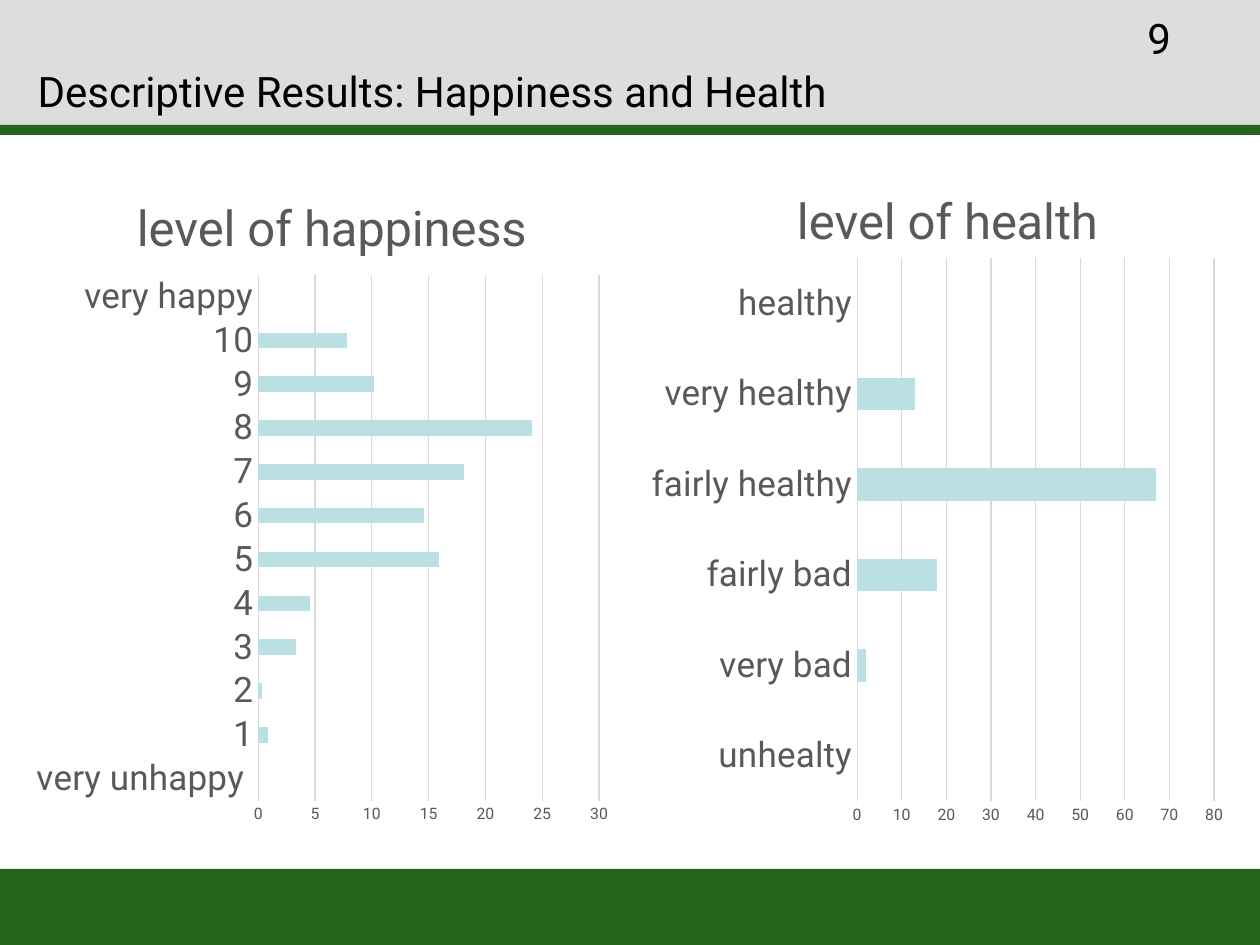
from lxml import etree
from pptx import Presentation
from pptx import util as u
from pptx.chart.data import CategoryChartData
from pptx.dml.color import RGBColor
from pptx.enum import chart as ch, shapes, text
from pptx.oxml.ns import qn

PX = u.Inches(1) / 126
GREEN, BAND, BLACK = "23651C", "DDDDDD", "000000"
GREY, GRID, BAR = "595959", "D9D9D9", "BBE0E3"


def px(*lengths):
    return [round(n * PX) for n in lengths]


def rgb(color):
    return RGBColor.from_string(color)


def format_font(font, size, color):
    for key, value in {"name": "Roboto", "size": u.Pt(size), "bold": False}.items():
        setattr(font, key, value)
    font.color.rgb = rgb(color)


def add_band(slide, box, color):
    band = slide.shapes.add_shape(shapes.MSO_SHAPE.RECTANGLE, *px(*box))
    band.shadow.inherit = False
    band.fill.solid()
    band.fill.fore_color.rgb = rgb(color)
    band.line.fill.background()


def write_line(frame, wording, anchor):
    frame.word_wrap = True
    frame.auto_size = text.MSO_AUTO_SIZE.NONE
    frame.vertical_anchor = anchor
    line = frame.paragraphs[0]
    line.alignment = text.PP_ALIGN.LEFT
    run = line.add_run()
    run.text = wording
    format_font(run.font, 24, BLACK)


def add_header(slide, box, heading, number):
    left, top, width, height = box
    add_band(slide, box, BAND)
    add_band(slide, (left, top + height, width, 10), GREEN)

    # Title goes in front of the bands
    title = slide.shapes.title
    slide.shapes._spTree.append(title._element)
    title.left, title.top, title.width, title.height = px(left + 25, top + 55, 1042, 71)
    write_line(title.text_frame, heading, text.MSO_ANCHOR.MIDDLE)

    # Page number
    page = slide.shapes.add_textbox(*px(left + 1135, top + 6, 111, 67))
    write_line(page.text_frame, number, text.MSO_ANCHOR.TOP)


def set_layout(parent, index, box, **values):
    """Fix the place of a chart part, in px inside a chart of the given box."""
    for old in parent.findall(qn("c:layout")):
        parent.remove(old)
    layout = etree.Element(qn("c:layout"))
    manual = etree.SubElement(layout, qn("c:manualLayout"))
    if "w" in values:
        etree.SubElement(manual, qn("c:layoutTarget")).set("val", "inner")
    for key in ("x", "y"):
        etree.SubElement(manual, qn(f"c:{key}Mode")).set("val", "edge")
    for key, value in values.items():
        side = box[2] if key in "xw" else box[3]
        etree.SubElement(manual, qn(f"c:{key}")).set("val", str(round(value / side, 3)))
    parent.insert(index, layout)


def add_level_chart(slide, box, heading, levels, heading_at, plot_at):
    data = CategoryChartData()
    data.categories = list(levels)
    data.add_series("Series 1", list(levels.values()))
    chart = slide.shapes.add_chart(
        ch.XL_CHART_TYPE.BAR_CLUSTERED, *px(*box), data).chart
    format_font(chart.font, 10, BLACK)
    chart.has_legend = False

    # Heading
    chart.has_title = True
    chart.chart_title.include_in_layout = False
    frame = chart.chart_title.text_frame
    frame.text = heading
    format_font(frame.paragraphs[0].runs[0].font, 28, GREY)
    set_layout(chart.chart_title._element, 1, box, **heading_at)

    # Bars
    plot = chart.plots[0]
    plot.gap_width = 182
    plot.vary_by_categories = False
    bars = plot.series[0].format.fill
    bars.solid()
    bars.fore_color.rgb = rgb(BAR)
    set_layout(chart._chartSpace.chart.plotArea, 0, box, **plot_at)

    # Axes
    for axis, size in ((chart.category_axis, 20), (chart.value_axis, 9)):
        axis.major_tick_mark = axis.minor_tick_mark = ch.XL_TICK_MARK.NONE
        format_font(axis.tick_labels.font, size, GREY)
    chart.value_axis.has_major_gridlines = True
    chart.value_axis.format.line.fill.background()
    for line in (chart.category_axis.format.line,
                 chart.value_axis.major_gridlines.format.line):
        line.color.rgb = rgb(GRID)
        line.width = u.Pt(0.75)


def main():
    deck = Presentation()
    deck.slide_width, deck.slide_height = px(1260, 945)
    slide = deck.slides.add_slide(deck.slide_layouts[5])

    add_band(slide, (0, 869, 1260, 76), GREEN)
    add_header(slide, (0, 0, 1260, 125),
               "Descriptive Results: Happiness and Health", "9")

    scores = [0.9, 0.3, 3.3, 4.6, 15.9, 14.6, 18.1, 24.1, 10.2, 7.8]
    happiness = {"very unhappy ": None}
    happiness.update({str(n): score for n, score in enumerate(scores, 1)})
    happiness["very happy"] = None
    add_level_chart(slide, (25, 155, 595, 684), "level of happiness", happiness,
                    dict(x=103, y=32), dict(x=233, y=120, w=341, h=526))

    health = {"unhealty": None, "very bad": 2, "fairly bad": 18,
              "fairly healthy": 67, "very healthy": 13, "healthy": None}
    add_level_chart(slide, (640, 155, 595, 684), "level of health", health,
                    dict(x=148, y=25), dict(x=217, y=103, w=357, h=543))

    deck.save("out.pptx")


if __name__ == "__main__":
    main()
